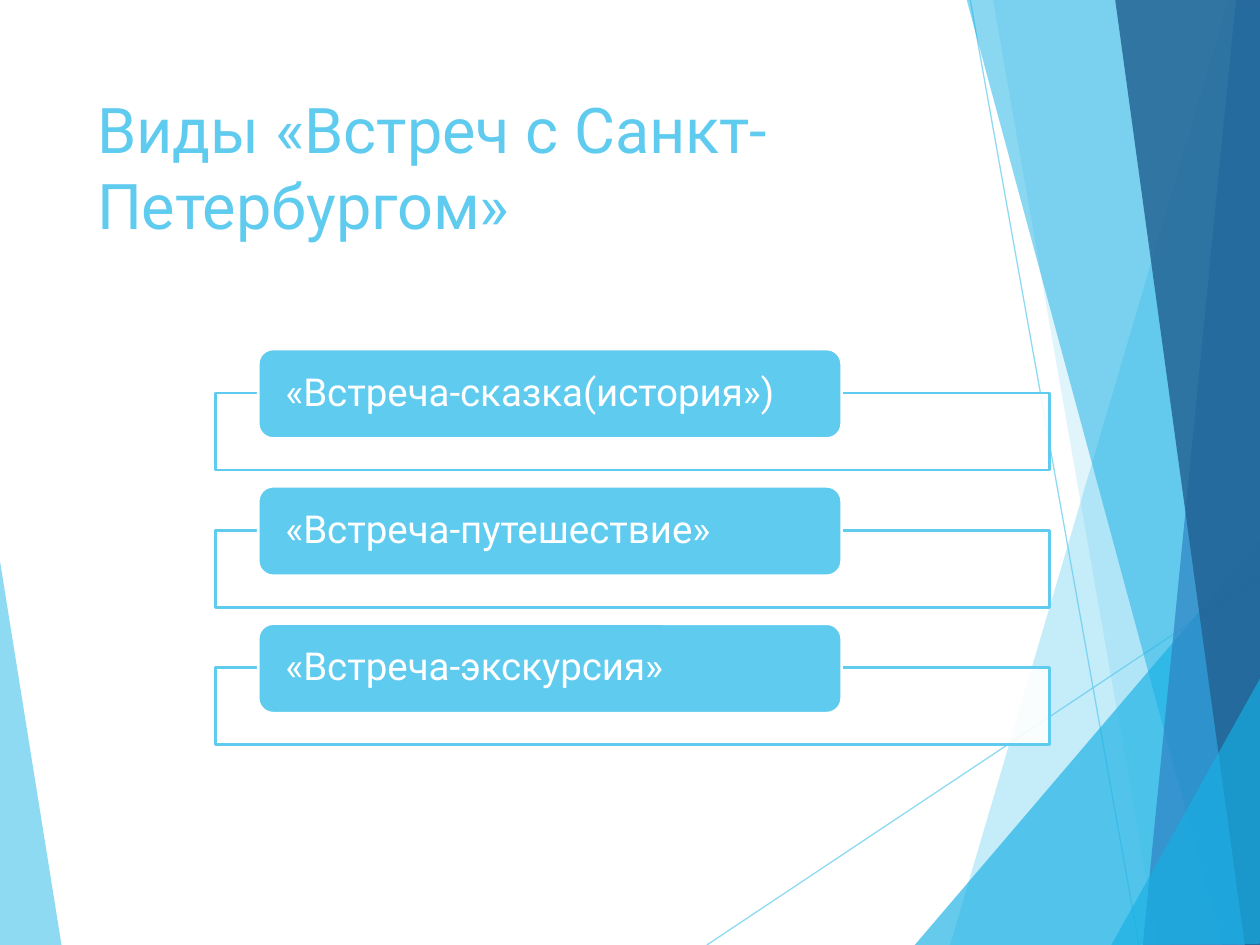
from dataclasses import dataclass
from typing import Optional

from lxml.etree import SubElement
from pptx import Presentation
from pptx.dml.color import RGBColor
from pptx.enum.shapes import MSO_CONNECTOR, MSO_SHAPE
from pptx.enum.text import MSO_ANCHOR, MSO_AUTO_SIZE, PP_ALIGN
from pptx.oxml.ns import qn
from pptx.util import Inches, Pt


@dataclass(frozen=True)
class Theme:
    font: str = "Roboto"
    sky: str = "5FCBEF"
    cyan: str = "17B0E4"
    blue: str = "2E83C3"
    navy: str = "226292"
    white: str = "FFFFFF"
    title: int = 36
    label: int = 22
    border: float = 1.5
    hair: float = 0.75


@dataclass(frozen=True)
class Facet:
    points: tuple
    color: str
    alpha: int


@dataclass(frozen=True)
class Ray:
    start: tuple
    end: tuple


theme = Theme()

WEDGE = Facet(((-0.01, 4.39), (0.49, 7.51), (-0.01, 7.5)), theme.sky, 70)
RAYS = (Ray((5.61, 7.5), (10.01, 4.57)), Ray((7.7, 0), (9.04, 7.5)))
FACETS = (
    Facet(((9.75, 0), (7.54, 7.5), (10.02, 7.51), (10.01, 0.01)), theme.sky, 36),
    Facet(((7.88, -0.01), (9.19, 7.5), (10.01, 7.5), (10.01, -0.01)), theme.sky, 20),
    Facet(((7.26, 7.5), (10, 4.29), (10.01, 7.5)), theme.cyan, 66),
    Facet(((7.67, -0.01), (9.7, 7.5), (10.01, 7.49), (10.01, -0.01)), theme.cyan, 50),
    Facet(((9.81, -0.01), (9.07, 7.5), (10.01, 7.5), (10, -0.01)), theme.blue, 70),
    Facet(((8.85, -0.01), (9.88, 7.5), (10.02, 7.5), (10, -0.01)), theme.navy, 82),
    Facet(((8.82, 7.5), (10.02, 5.35), (10.02, 7.49)), theme.cyan, 66),
)
KINDS = (
    "«Встреча-сказка(история»)",
    "«Встреча-путешествие»",
    "«Встреча-экскурсия»",
)
TOP, STEP = 2.77, 1.09


def paint(target, color: str, alpha: int = 100) -> None:
    target.solid()
    target.fore_color.rgb = RGBColor.from_string(color)
    if alpha < 100:
        tone = target._xPr.find(qn("a:solidFill"))[0]
        SubElement(tone, qn("a:alpha"), val=str(alpha * 1000))


def style(shape, color: str, alpha: int = 100, edge: Optional[str] = None) -> None:
    shape.shadow.inherit = False
    paint(shape.fill, color, alpha)
    if edge:
        paint(shape.line.fill, edge)
        shape.line.width = Pt(theme.border)
    else:
        shape.line.fill.background()


def write(shape, text: str, *, size: int, color: str, anchor: MSO_ANCHOR,
          inset: tuple = (0.1, 0.05), space: float = 1.0) -> None:
    frame = shape.text_frame
    frame.text = text
    frame.word_wrap = True
    frame.auto_size = MSO_AUTO_SIZE.NONE
    frame.vertical_anchor = anchor
    frame.margin_left = frame.margin_right = Inches(inset[0])
    frame.margin_top = frame.margin_bottom = Inches(inset[1])
    para = frame.paragraphs[0]
    para.alignment = PP_ALIGN.LEFT
    para.line_spacing = space
    font = para.runs[0].font
    font.name = theme.font
    font.size = Pt(size)
    font.color.rgb = RGBColor.from_string(color)


def draw_facet(shapes, facet: Facet) -> None:
    points = [(Inches(x), Inches(y)) for x, y in facet.points]
    pen = shapes.build_freeform(*points[0])
    pen.add_line_segments(points[1:], close=True)
    style(pen.convert_to_shape(), facet.color, facet.alpha)


def draw_ray(shapes, ray: Ray) -> None:
    ends = [Inches(v) for v in ray.start + ray.end]
    line = shapes.add_connector(MSO_CONNECTOR.STRAIGHT, *ends)
    paint(line.line.fill, theme.sky, 70)
    line.line.width = Pt(theme.hair)
    SubElement(line._element.spPr, qn("a:effectLst"))


def draw_kind(shapes, text: str, top: float) -> None:
    frame = shapes.add_shape(MSO_SHAPE.RECTANGLE, Inches(1.71), Inches(top + 0.35),
                             Inches(6.62), Inches(0.61))
    style(frame, theme.white, 90, theme.sky)
    label = shapes.add_shape(MSO_SHAPE.ROUNDED_RECTANGLE, Inches(2.05), Inches(top),
                             Inches(4.63), Inches(0.71))
    style(label, theme.sky, edge=theme.white)
    write(label, text, size=theme.label, color=theme.white,
          anchor=MSO_ANCHOR.MIDDLE, inset=(0.18, 0), space=0.9)


def main() -> None:
    deck = Presentation()
    deck.slide_width, deck.slide_height = Inches(10), Inches(7.5)
    shapes = deck.slides.add_slide(deck.slide_layouts[5]).shapes
    draw_facet(shapes, WEDGE)
    for ray in RAYS:
        draw_ray(shapes, ray)
    for facet in FACETS:
        draw_facet(shapes, facet)
    title = shapes.title
    title.left, title.top = Inches(0.67), Inches(0.67)
    title.width, title.height = Inches(6.94), Inches(1.44)
    write(title, "Виды «Встреч с Санкт-Петербургом»", size=theme.title,
          color=theme.sky, anchor=MSO_ANCHOR.TOP)
    for row, text in enumerate(KINDS):
        draw_kind(shapes, text, TOP + row * STEP)
    deck.save("out.pptx")


if __name__ == "__main__":
    main()
